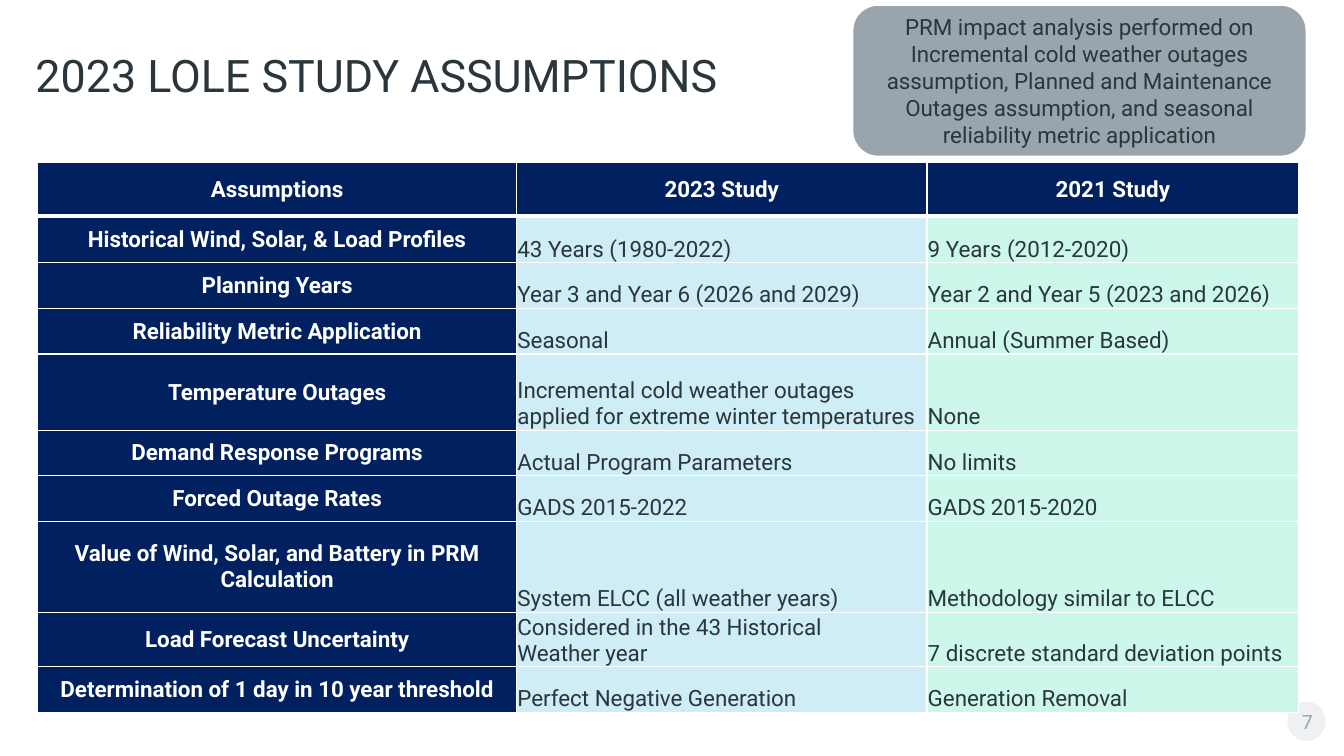
import pptx
import pptx.util
import pptx.dml.color
import pptx.enum.shapes
import pptx.enum.text
import pptx.oxml
import pptx.oxml.ns

Cm = pptx.util.Cm
Pt = pptx.util.Pt
RGBColor = pptx.dml.color.RGBColor
MSO_SHAPE = pptx.enum.shapes.MSO_SHAPE
MSO_ANCHOR = pptx.enum.text.MSO_ANCHOR
PP_ALIGN = pptx.enum.text.PP_ALIGN

WHITE = RGBColor(0xFF, 0xFF, 0xFF)
INK = RGBColor(0x2A, 0x36, 0x3B)
GREY = RGBColor(0x99, 0xA4, 0xAD)
PALE_GREY = RGBColor(0xEE, 0xF0, 0xF1)
NAVY = RGBColor(0x00, 0x20, 0x60)
PALE_BLUE = RGBColor(0xCE, 0xED, 0xF6)
PALE_GREEN = RGBColor(0xCD, 0xF7, 0xEB)

COLUMN_WIDTHS = [12.07, 10.34, 9.37]
COLUMN_FILLS = [NAVY, PALE_BLUE, PALE_GREEN]
ROW_HEIGHTS = [1.35, 1.17, 1.15, 1.15, 1.92, 1.15, 1.15, 2.29, 1.33, 1.15]
ASSUMPTIONS = [
    ("Assumptions", "2023 Study", "2021 Study"),
    ("Historical Wind, Solar, & Load Profiles", "43 Years (1980-2022)", "9 Years (2012-2020)"),
    ("Planning Years", "Year 3 and Year 6 (2026 and 2029)", "Year 2 and Year 5 (2023 and 2026)"),
    ("Reliability Metric Application", "Seasonal", "Annual (Summer Based)"),
    ("Temperature Outages",
     "Incremental cold weather outages applied for extreme winter temperatures", "None"),
    ("Demand Response Programs", "Actual Program Parameters", "No limits"),
    ("Forced Outage Rates", "GADS 2015-2022", "GADS 2015-2020"),
    ("Value of Wind, Solar, and Battery in PRM Calculation",
     "System ELCC (all weather years)", "Methodology similar to ELCC"),
    ("Load Forecast Uncertainty",
     "Considered in the 43 Historical\nWeather year", "7 discrete standard deviation points"),
    ("Determination of 1 day in 10 year threshold",
     "Perfect Negative Generation", "Generation Removal"),
]


class Deck:
    font = "Roboto"

    def __init__(self):
        self.prs = pptx.Presentation()
        self.prs.slide_width = Cm(33.87)
        self.prs.slide_height = Cm(19.05)
        self.s = self.prs.slides.add_slide(self.prs.slide_layouts[5])

    def set_text(self, tf, text, size, color, align=PP_ALIGN.CENTER, bold=False):
        tf.text = text
        tf.word_wrap = True
        for p in tf.paragraphs:
            p.alignment = align
            p.font.name = self.font
            p.font.size = Pt(size)
            p.font.bold = bold
            p.font.color.rgb = color

    def title(self, text, left, top, width, height):
        sp = self.s.shapes.title
        sp.left, sp.top, sp.width, sp.height = Cm(left), Cm(top), Cm(width), Cm(height)
        tf = sp.text_frame
        self.set_text(tf, text, 32, INK, PP_ALIGN.LEFT)
        tf.auto_size = pptx.enum.text.MSO_AUTO_SIZE.NONE
        tf.vertical_anchor = MSO_ANCHOR.MIDDLE
        tf.paragraphs[0].line_spacing = 0.75

    def shape(self, kind, left, top, width, height, fill, line=None):
        sp = self.s.shapes.add_shape(kind, Cm(left), Cm(top), Cm(width), Cm(height))
        sp.shadow.inherit = False
        sp.fill.solid()
        sp.fill.fore_color.rgb = fill
        if line is None:
            sp.line.fill.background()
        else:
            sp.line.color.rgb = line
            sp.line.width = Pt(1)
        return sp

    def callout(self, text, left, top, width, height):
        sp = self.shape(MSO_SHAPE.ROUNDED_RECTANGLE, left, top, width, height, GREY, WHITE)
        sp.text_frame.vertical_anchor = MSO_ANCHOR.MIDDLE
        self.set_text(sp.text_frame, text, 16, INK)

    def page_number(self, text, left, top, size):
        self.shape(MSO_SHAPE.OVAL, left, top + 0.1, 0.97, 0.99, PALE_GREY)
        sp = self.s.shapes.add_textbox(Cm(left), Cm(top), Cm(size), Cm(size))
        tf = sp.text_frame
        tf.margin_left = tf.margin_right = Cm(0.08)
        tf.vertical_anchor = MSO_ANCHOR.BOTTOM
        self.set_text(tf, text, 14, GREY)

    def borders(self, cell, **widths):
        tcPr = cell._tc.get_or_add_tcPr()
        for side in "LRTB":
            tcPr.append(pptx.oxml.parse_xml(
                f'<a:ln{side} {pptx.oxml.ns.nsdecls("a")} w="{Pt(widths.get(side, 1))}">'
                f'<a:solidFill><a:srgbClr val="{WHITE}"/></a:solidFill></a:ln{side}>'))

    def table(self, rows, left, top, widths, heights):
        frame = self.s.shapes.add_table(len(rows), len(widths), Cm(left), Cm(top),
                                        Cm(sum(widths)), Cm(sum(heights)))
        table = frame.table
        table.horz_banding = False
        for column, width in zip(table.columns, widths):
            column.width = Cm(width)
        for i, (row, height) in enumerate(zip(rows, heights)):
            table.rows[i].height = Cm(height)
            for j, text in enumerate(row):
                cell = table.cell(i, j)
                heading = i == 0 or j == 0
                self.borders(cell, T=3 if i == 1 else 1, B=3 if i == 0 else 1)
                cell.fill.solid()
                cell.fill.fore_color.rgb = NAVY if heading else COLUMN_FILLS[j]
                cell.margin_left = cell.margin_right = cell.margin_top = Cm(0.02)
                cell.margin_bottom = 0
                cell.vertical_anchor = MSO_ANCHOR.MIDDLE if heading else MSO_ANCHOR.BOTTOM
                self.set_text(cell.text_frame, text, 16, WHITE if heading else INK,
                              PP_ALIGN.CENTER if heading else PP_ALIGN.LEFT, heading)


def main():
    deck = Deck()
    deck.page_number("7", 32.44, 17.58, 1.02)
    deck.title("2023 LOLE STUDY ASSUMPTIONS", 0.64, 0.71, 30.4, 2.62)
    deck.table(ASSUMPTIONS, 0.95, 4.1, COLUMN_WIDTHS, ROW_HEIGHTS)
    deck.callout("PRM impact analysis performed on Incremental cold weather outages "
                 "assumption, Planned and Maintenance Outages assumption, and seasonal "
                 "reliability metric application", 21.49, 0.13, 11.43, 3.81)
    deck.prs.save("out.pptx")


if __name__ == "__main__":
    main()
